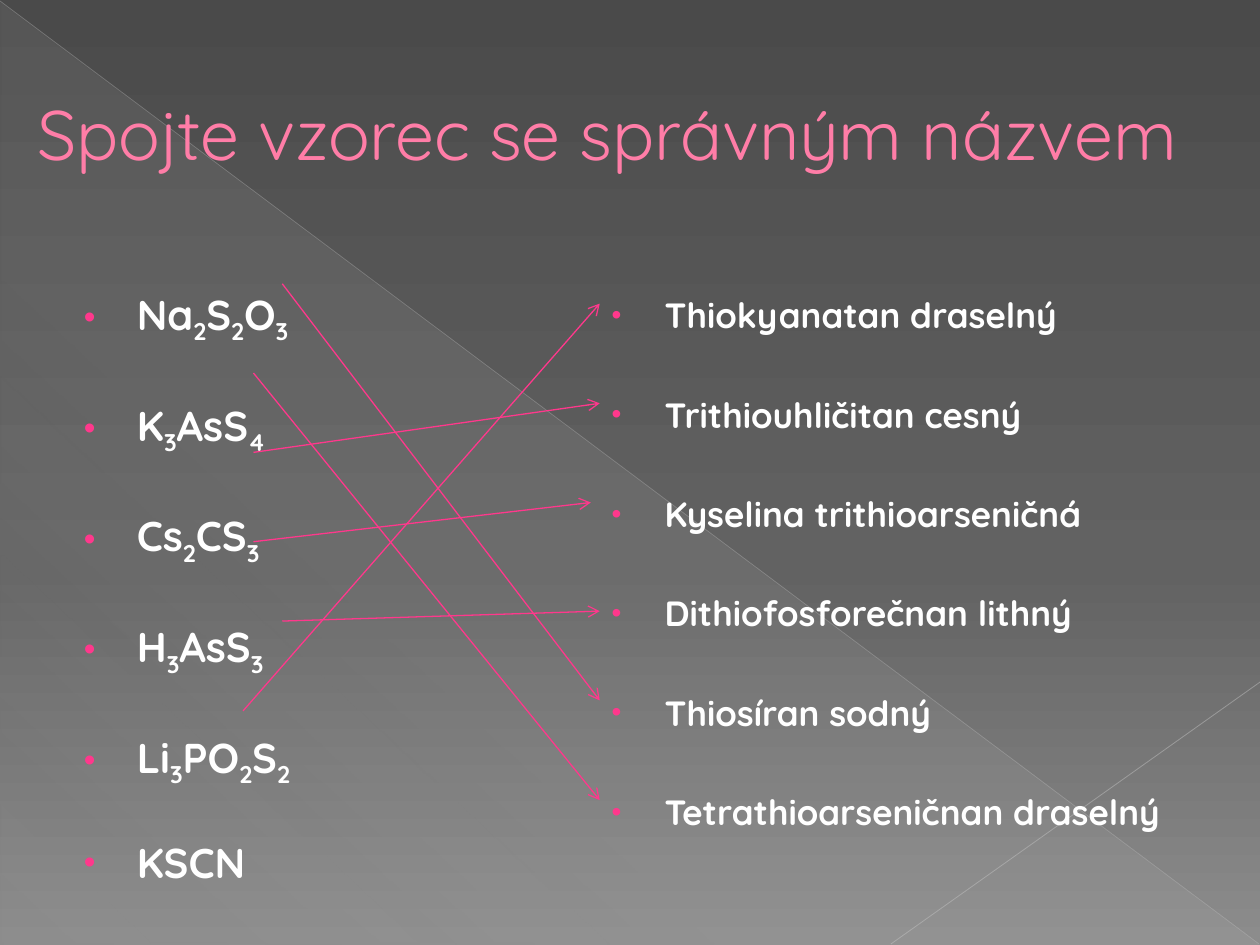
from lxml.etree import SubElement as Sub
from pptx import Presentation
from pptx.dml.color import RGBColor
from pptx.enum.shapes import MSO_CONNECTOR as Link, MSO_SHAPE as Shape
from pptx.enum.text import MSO_ANCHOR as Anchor
from pptx.oxml.ns import qn
from pptx.util import Cm, Pt

FONT = "Quicksand"
WHITE = RGBColor(0xFF, 0xFF, 0xFF)
PINK = RGBColor(0xFF, 0x38, 0x8C)
ROSE = RGBColor(0xFF, 0x7D, 0xA7)
WINE = RGBColor(0xB1, 0x27, 0x61)
DARK = RGBColor(0x4A, 0x4A, 0x4A)
SLATE = RGBColor(0x62, 0x62, 0x62)
ASH = RGBColor(0x8C, 0x8C, 0x8C)
MIST = RGBColor(0xD2, 0xD2, 0xD2)
SILVER = RGBColor(0xBF, 0xBF, 0xBF)
PEARL = RGBColor(0xC6, 0xC6, 0xC6)

FORMULAS = ["Na 2 S 2 O 3", "K 3 AsS 4", "Cs 2 CS 3", "H 3 AsS 3",
            "Li 3 PO 2 S 2", "KSCN"]
NAMES = ["Thiokyanatan draselný", "Trithiouhličitan cesný",
         "Kyselina trithioarseničná", "Dithiofosforečnan lithný",
         "Thiosíran sodný", "Tetrathioarseničnan draselný"]
ARROWS = [(5.69, 5.72, 12.09, 14.12), (5.11, 7.52, 12.09, 16.13),
          (5.11, 9.12, 12.09, 8.13), (5.11, 10.92, 11.91, 10.13),
          (5.69, 12.52, 12.09, 12.32), (4.9, 14.33, 12.09, 6.12)]


def tag(node, name, **attrs):
    return Sub(node, qn(name), {key: str(val) for key, val in attrs.items()})


def tint(node, color, alpha=100):
    clr = tag(node, "a:srgbClr", val=color)
    if alpha < 100:
        tag(clr, "a:alpha", val=alpha * 1000)


def shade(node, stops, angle):
    grad = tag(node, "a:gradFill", rotWithShape=1)
    row = tag(grad, "a:gsLst")
    for pos, color, alpha in stops:
        tint(tag(row, "a:gs", pos=pos * 1000), color, alpha)
    tag(grad, "a:lin", ang=angle * 60000, scaled=0)
    node.replace(node.find(qn("a:solidFill")), grad)


def add_line(slide, ends, color, width, alpha=100, arrow=False):
    line = slide.shapes.add_connector(Link.STRAIGHT, *map(Cm, ends))
    line.line.color.rgb = color
    line.line.width = Pt(width)
    props = line.element.spPr
    stroke = props.find(qn("a:ln"))
    if alpha < 100:
        clr = stroke.find(".//" + qn("a:srgbClr"))
        tag(clr, "a:alpha", val=alpha * 1000)
    if arrow:
        tag(stroke, "a:tailEnd", type="arrow")
    tag(props, "a:effectLst")


def add_back(slide, box):
    left, top, width, height = box
    fill = slide.background.fill
    fill.solid()
    fill.fore_color.rgb = DARK
    shade(slide.element.find(".//" + qn("p:bgPr")),
          [(0, DARK, 100), (60, SLATE, 100), (100, ASH, 100)], 90)
    wedge = slide.shapes.add_shape(
        Shape.RIGHT_TRIANGLE, Cm(left + 0.02), Cm(top + 0.04),
        Cm(width - 0.02), Cm(height - 0.04))
    wedge.shadow.inherit = False
    wedge.line.fill.background()
    wedge.fill.solid()
    wedge.fill.fore_color.rgb = MIST
    shade(wedge.element.spPr, [(0, MIST, 10), (70, MIST, 8), (100, MIST, 1)], 133)
    right, base = left + width, top + height
    add_line(slide, (left, top + 0.02, right - 0.02, base - 0.02), SILVER, 0.39, 35)
    add_line(slide, (right, top + 13.75, right - 7.44, base - 0.02), PEARL, 0.47, 45)


def add_frame(slide, box):
    frame = slide.shapes.add_textbox(*map(Cm, box)).text_frame
    frame.word_wrap = True
    return frame


def add_run(para, text, size, color, bold=False):
    run = para.add_run()
    run.text = text
    font = run.font
    font.name, font.size, font.bold = FONT, Pt(size), bold
    font.color.rgb = color
    return run.font._element


def add_title(slide, box):
    frame = add_frame(slide, box)
    frame.vertical_anchor = Anchor.MIDDLE
    props = add_run(frame.paragraphs[0], "Spojte vzorec se správným názvem", 40, ROSE)
    edge = tag(props, "a:ln", w=Pt(0.5))
    tint(tag(edge, "a:solidFill"), WINE)
    props.insert(0, edge)


def add_list(slide, box, items, size, space):
    frame = add_frame(slide, box)
    for num, parts in enumerate(items):
        para = frame.add_paragraph() if num else frame.paragraphs[0]
        para.line_spacing = space
        props = para._p.get_or_add_pPr()
        props.set("marL", str(Cm(1.24)))
        props.set("indent", str(Cm(-1.07)))
        tag(tag(props, "a:spcBef"), "a:spcPct", val=20000)
        tint(tag(props, "a:buClr"), PINK)
        tag(props, "a:buSzPct", val=80000)
        tag(props, "a:buFont", typeface="Arial")
        tag(props, "a:buChar", char="•")
        for part in parts:
            font = add_run(para, part, size, WHITE, True)
            if part.isdigit():
                font.set("baseline", "-25000")


def add_arrows(slide, ends):
    for points in ends:
        add_line(slide, points, PINK, 0.75, arrow=True)


def main():
    deck = Presentation()
    deck.slide_width, deck.slide_height = Cm(25.4), Cm(19.05)
    slide = deck.slides.add_slide(deck.slide_layouts[6])
    add_back(slide, (0, 0, 25.4, 19.05))
    add_title(slide, (0.5, 0.74, 24.9, 3.88))
    add_list(slide, (1.27, 4.78, 11.23, 12.57),
             [item.split() for item in FORMULAS], 23.8, 1.8)
    add_list(slide, (11.91, 4.78, 12.22, 12.57),
             [[item] for item in NAMES], 20, 2.2)
    add_arrows(slide, ARROWS)
    deck.save("out.pptx")


if __name__ == "__main__":
    main()
